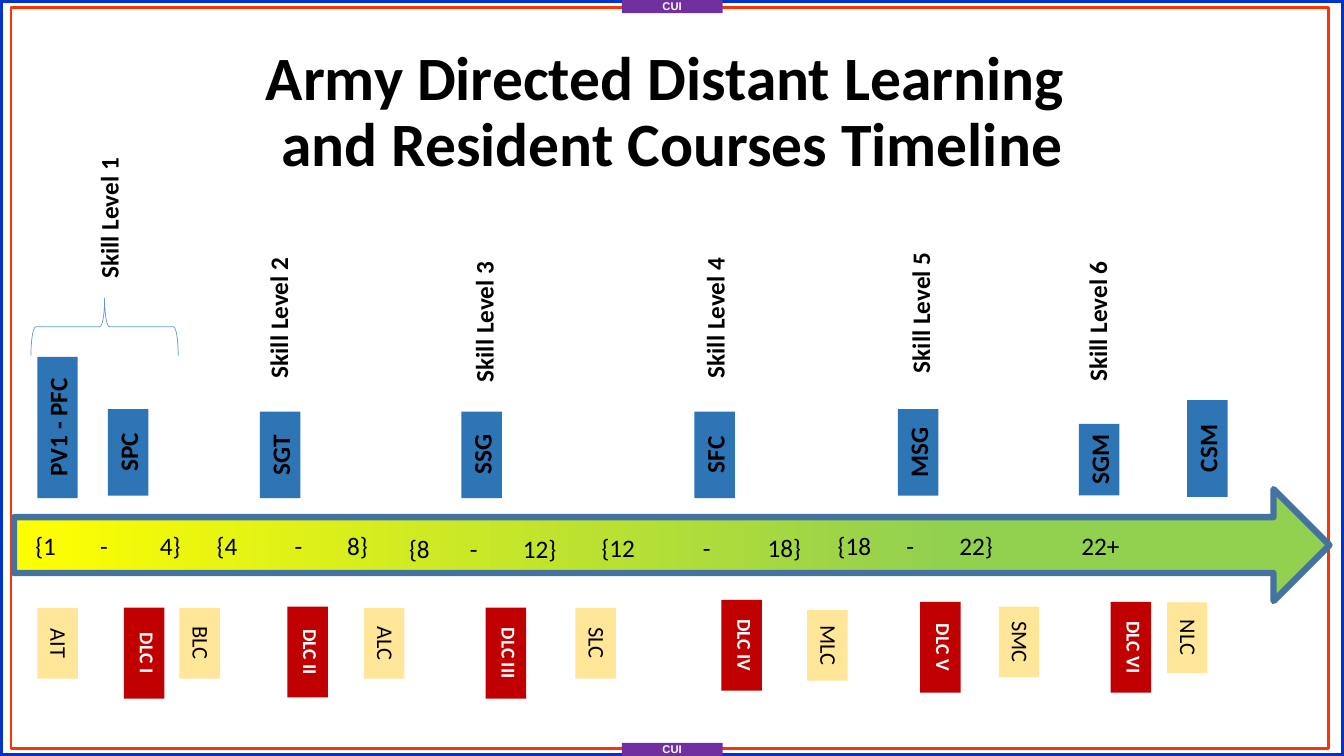
"""Build the Army learning and resident courses timeline slide."""
from lxml import etree
from pptx import Presentation
from pptx.dml.color import RGBColor
from pptx.enum.shapes import MSO_SHAPE
from pptx.enum.text import MSO_ANCHOR, PP_ALIGN
from pptx.oxml.ns import qn
from pptx.util import Cm, Pt

RECTANGLE, BRACE, ARROW = MSO_SHAPE.RECTANGLE, MSO_SHAPE.LEFT_BRACE, MSO_SHAPE.DOWN_ARROW
LEFT, CENTER = PP_ALIGN.LEFT, PP_ALIGN.CENTER
TOP, MIDDLE = MSO_ANCHOR.TOP, MSO_ANCHOR.MIDDLE

COLORS = {
    "black": "000000", "white": "FFFFFF", "outer": "0033CC", "inner": "FF3300",
    "marking": "7030A0", "rank": "2E75B6", "resident": "FFE699", "distant": "C00000",
    "brace": "5B9BD5", "start": "FFFF00", "end": "92D050", "outline": "43739E",
}

deck = Presentation()
deck.slide_width, deck.slide_height = Cm(33.87), Cm(19.05)
slide = deck.slides.add_slide(deck.slide_layouts[6])


def add_figure(kind, x, y, width, height, fill=None, line=None, weight=0):
    """Add a preset shape with a plain fill and outline."""
    figure = slide.shapes.add_shape(kind, Cm(x), Cm(y), Cm(width), Cm(height))
    figure.shadow.inherit = False
    if fill:
        figure.fill.solid()
        figure.fill.fore_color.rgb = RGBColor.from_string(COLORS[fill])
    else:
        figure.fill.background()
    if line:
        figure.line.color.rgb = RGBColor.from_string(COLORS[line])
        figure.line.width = Pt(weight)
    else:
        figure.line.fill.background()
    return figure


def write(holder, text, size, color="black", bold=False, align=CENTER,
          anchor=TOP, inset=None, font="Calibri", wrap=False):
    """Put one styled paragraph in a shape or text box."""
    frame = holder.text_frame
    frame.word_wrap, frame.vertical_anchor = wrap, anchor
    if inset is not None:
        frame.margin_left = frame.margin_right = Cm(inset)
        frame.margin_top = frame.margin_bottom = Cm(inset)
    paragraph = frame.paragraphs[0]
    paragraph.text, paragraph.alignment = text, align
    paragraph.font.name, paragraph.font.size, paragraph.font.bold = font, Pt(size), bold
    paragraph.font.color.rgb = RGBColor.from_string(COLORS[color])
    return paragraph


add_figure(RECTANGLE, 0, 0, 33.87, 19.05, line="outer", weight=3.75)
add_figure(RECTANGLE, 0.28, 0.18, 33.2, 18.69, line="inner", weight=2)
for marking_y in (0, 18.72):
    marking = add_figure(RECTANGLE, 15.67, marking_y, 2.54, 0.33, "marking")
    write(marking, "CUI", 8, "white", True, anchor=MIDDLE, inset=0, font="Arial")

title = slide.shapes.add_textbox(Cm(2.34), Cm(1.02), Cm(29.21), Cm(3.68))
heading = write(title, "Army Directed Distant Learning \vand Resident Courses Timeline",
                44, bold=True, anchor=MIDDLE, wrap=True)
heading.line_spacing = 0.9

TAG_HEIGHT = 1.02
tag_groups = [
    (90, "resident", 16, "black", False, CENTER, [
        ("AIT", 1.45, 16.21, 1.78), ("BLC", 5.03, 16.21, 1.78), ("ALC", 9.68, 16.21, 1.78),
        ("SLC", 15.01, 16.21, 1.78), ("MLC", 20.85, 16.26, 1.78),
        ("SMC", 25.68, 16.18, 1.78), ("NLC", 29.92, 16.07, 1.78)]),
    (90, "distant", 14, "white", True, CENTER, [
        ("DLC I", 3.63, 16.46, 2.29), ("DLC II", 7.75, 16.43, 2.29),
        ("DLC III", 12.75, 16.46, 2.29), ("DLC IV", 18.69, 16.26, 2.29),
        ("DLC V", 23.7, 16.31, 2.29), ("DLC VI", 28.5, 16.31, 2.29)]),
    (270, "rank", 18, "black", True, CENTER, [
        ("PV1 - PFC", 1.45, 10.77, 3.56), ("SPC", 3.23, 11.4, 2.18),
        ("SGT", 7.06, 11.46, 2.18), ("SSG", 12.14, 11.46, 2.18),
        ("SFC", 18.01, 11.46, 2.18), ("MSG", 23.14, 11.4, 2.18),
        ("SGM", 27.7, 11.58, 1.8), ("CSM", 30.43, 11.3, 2.44)]),
    (270, None, 18, "black", True, LEFT, [
        ("Skill Level 1", 2.74, 5.49, 3.56), ("Skill Level 2", 7.01, 8, 3.56),
        ("Skill Level 3", 12.19, 8.1, 3.56), ("Skill Level 4", 18.01, 8, 3.56),
        ("Skill Level 5", 23.19, 7.87, 3.56), ("Skill Level 6", 27.65, 8.09, 3.56)]),
]
for rotation, fill, size, color, bold, align, tags in tag_groups:
    for label, center_x, center_y, length in tags:
        corner = center_x - length / 2, center_y - TAG_HEIGHT / 2
        if fill:
            tag = add_figure(RECTANGLE, *corner, length, TAG_HEIGHT, fill)
        else:
            tag = slide.shapes.add_textbox(*map(Cm, (*corner, length, TAG_HEIGHT)))
        tag.rotation = rotation
        write(tag, label, size, color, bold, align)

skill_brace = add_figure(BRACE, 1.91, 6.38, 1.45, 3.71, line="brace", weight=0.5)
skill_brace.rotation = 90

timeline = add_figure(ARROW, 15.52, -2.84, 2.82, 33.15, line="outline", weight=4.5)
timeline.rotation = 270
timeline.fill.gradient()
timeline.fill.gradient_angle = 270
for stop, color, position in zip(timeline.fill.gradient_stops, ("start", "end"), (0, 0.71)):
    stop.color.rgb = RGBColor.from_string(COLORS[color])
    stop.position = position

service_years = [
    ("{1", "4}", 0.89, 2.62, 4.55, 13.36), ("{4", "8}", 5.46, 7.52, 9.27, 13.36),
    ("{8", "12}", 10.31, 11.94, 14.02, 13.44), ("{12", "18}", 15.16, 17.81, 20.19, 13.41),
    ("{18", "22}", 21.11, 22.94, 25.02, 13.36),
]
for first, last, start_x, dash_x, end_x, y in service_years:
    years = slide.shapes.add_textbox(Cm(start_x), Cm(y), Cm(end_x - start_x + 0.2), Cm(0.76))
    line = write(years, f"{first}\t-\t{last}", 18, align=LEFT, inset=0, wrap=True)
    tab_list = etree.Element(qn("a:tabLst"))
    for tab_x, tab_align in ((dash_x, "ctr"), (end_x, "r")):
        etree.SubElement(tab_list, qn("a:tab"), pos=str(Cm(tab_x - start_x)), algn=tab_align)
    line._p.get_or_add_pPr().insert(0, tab_list)

final_years = slide.shapes.add_textbox(Cm(27.25), Cm(13.36), Cm(1.2), Cm(0.76))
write(final_years, "22+", 18, align=LEFT, inset=0, wrap=True)

deck.save("out.pptx")
